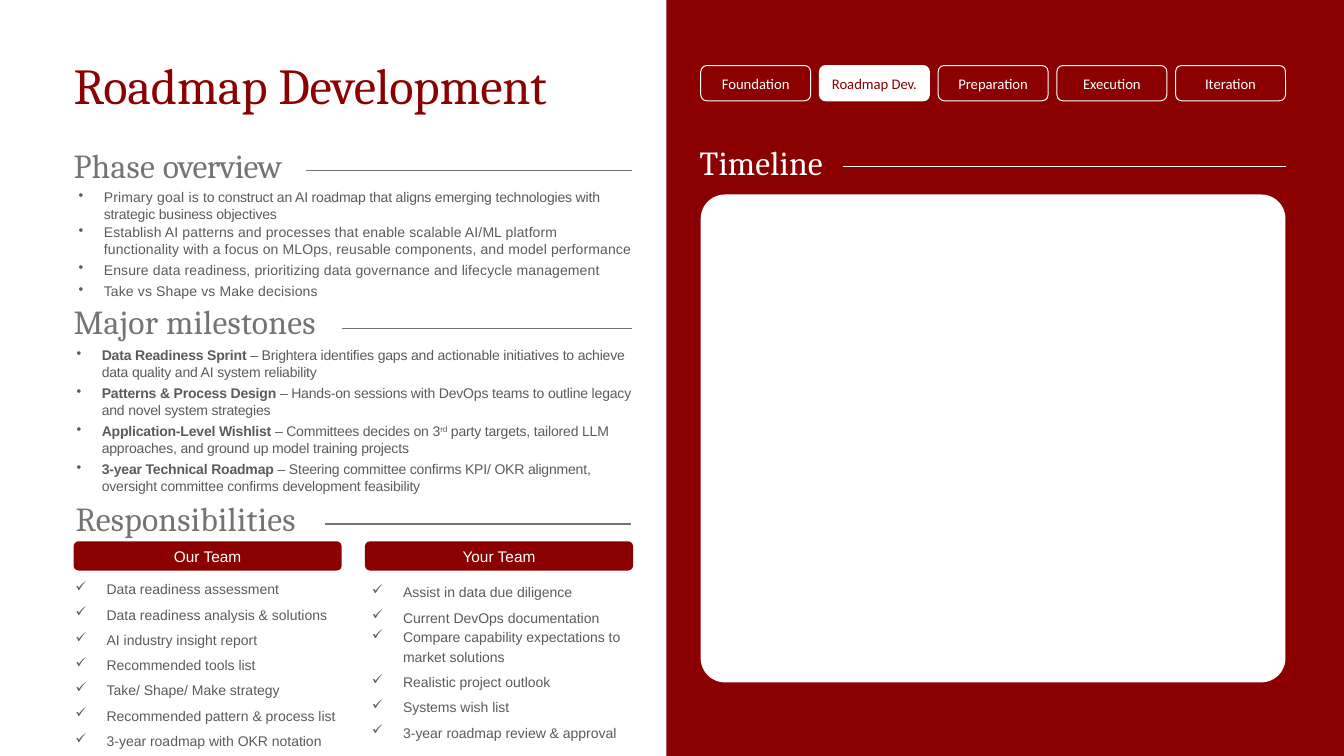
"""Build the Roadmap Development slide: phase summary on the left, timeline panel on the right."""
from dataclasses import dataclass

from lxml.etree import SubElement
from pptx import Presentation
from pptx.dml.color import RGBColor
from pptx.enum.shapes import MSO_CONNECTOR as Connector, MSO_SHAPE as Shape
from pptx.enum.text import MSO_ANCHOR as Anchor, PP_ALIGN as Align
from pptx.oxml.ns import qn
from pptx.util import Inches, Pt


@dataclass(frozen=True)
class Theme:
    red: str = "8B0000"
    white: str = "FFFFFF"
    gray: str = "747474"
    ink: str = "5A5B5E"
    serif: str = "Cambria"
    sans: str = "Arial"
    label: str = "Calibri"
    title_size: float = 36
    heading_size: float = 24
    button_size: float = 11
    tab_size: float = 10.5
    body_size: float = 10
    rule_width: float = 0.96
    tab_line: float = 0.72


THEME = Theme()

TITLE = "Roadmap Development"
PHASES = ["Foundation", "Roadmap Dev.", "Preparation", "Execution", "Iteration"]
CURRENT_PHASE = "Roadmap Dev."
TABS_LEFT, TABS_RIGHT, TABS_TOP = 6.95, 12.75, 0.65
TAB_WIDTH, TAB_HEIGHT = 1.09, 0.35

# Each heading: runs of (text, tracking), box, rule start, rule end, rule height, colour
HEADINGS = [
    ([("Phase ", 0.2), ("overview", -0.4)], (0.73, 1.43, 2.37, 0.42), 3.04, 6.27, 1.69, THEME.gray),
    ([("Major milestones", 0.2)], (0.73, 2.98, 2.66, 0.42), 3.39, 6.27, 3.26, THEME.gray),
    ([("Responsibilities", 0.2)], (0.75, 4.93, 2.5, 0.42), 3.22, 6.26, 5.2, THEME.gray),
    ([("Timeline", 0.1)], (6.94, 1.4, 2.84, 0.43), 8.36, 12.75, 1.65, THEME.white),
]

OVERVIEW = [
    (0.9, [("Primary ", 0.1), ("goal ", 0.2), ("is ", 0.1),
           ("to construct an AI roadmap that aligns emerging technologies with "
            "strategic business objectives", -0.1)]),
    (0.9, [("Establish AI patterns and processes that enable scalable AI/ML platform functionality "
            "with a focus on MLOps, reusable components, and model performance", 0.1)]),
    (3, [("Ensure data readiness, prioritizing data governance and lifecycle management", 0.1)]),
    (3, [("Take vs Shape vs Make decisions", 0.1)]),
]

MILESTONES = [
    ("Data Readiness Sprint ",
     ["– Brightera identifies gaps and actionable initiatives to "
      "achieve data quality and AI system reliability"]),
    ("Patterns & Process Design ",
     ["– Hands-on sessions with DevOps teams to outline legacy and novel system strategies"]),
    ("Application-Level Wishlist ",
     ["– Committees decides on 3", "rd",
      " party targets, tailored LLM approaches, and ground up model training projects"]),
    ("3-year Technical Roadmap ",
     ["– Steering committee confirms KPI/ OKR alignment, "
      "oversight committee confirms development feasibility"]),
]

TEAMS = [
    ("Our Team", 0.73, (0.65, 5.63, 2.86, 1.84), [
        "Data readiness assessment", "Data readiness analysis & solutions",
        "AI industry insight report", "Recommended tools list", "Take/ Shape/ Make strategy",
        "Recommended pattern & process list", "3-year roadmap with OKR notation"]),
    ("Your Team", 3.62, (3.59, 5.66, 2.86, 1.72), [
        "Assist in data due diligence", "Current DevOps documentation",
        "Compare capability expectations to market solutions", "Realistic project outlook",
        "Systems wish list", "3-year roadmap review & approval"]),
]
TWO_LINE_DUTY = "Compare capability expectations to market solutions"


def color(value):
    return RGBColor.from_string(value)


def add_span(para, text, font, size, tint, tracking=0, bold=False, raised=False):
    span = para.add_run()
    span.text = text
    span.font.name, span.font.size, span.font.bold = font, Pt(size), bold
    span.font.color.rgb = color(tint)
    properties = span.font._element
    if tracking:
        properties.set("spc", str(round(tracking * 100)))
    if raised:
        properties.set("baseline", "30000")


def add_block(page, kind, place, fill, line=None, corner=None):
    block = page.shapes.add_shape(kind, *map(Inches, place))
    block.shadow.inherit = False
    block.fill.solid()
    block.fill.fore_color.rgb = color(fill)
    if line:
        block.line.color.rgb = color(line)
        block.line.width = Pt(THEME.tab_line)
    else:
        block.line.fill.background()
    if corner:
        block.adjustments[0] = corner / min(place[2:])
    return block


def add_label(block, text, font, size, tint):
    frame = block.text_frame
    frame.margin_left = frame.margin_right = frame.margin_top = frame.margin_bottom = 0
    frame.vertical_anchor = Anchor.MIDDLE
    para = frame.paragraphs[0]
    para.alignment = Align.CENTER
    add_span(para, text, font, size, tint)


def add_box(page, place, inset=True):
    frame = page.shapes.add_textbox(*map(Inches, place)).text_frame
    frame.word_wrap = True
    if not inset:
        frame.margin_left = frame.margin_right = frame.margin_bottom = 0
        frame.margin_top = Inches(0.01)
    return frame


def add_rule(page, start, end, height, tint):
    rule = page.shapes.add_connector(
        Connector.STRAIGHT, Inches(start), Inches(height), Inches(end), Inches(height))
    rule.line.color.rgb = color(tint)
    rule.line.width = Pt(THEME.rule_width)
    SubElement(rule._element.spPr, qn("a:effectLst"))


def add_item(frame, index, mark, hang, indent):
    para = frame.add_paragraph() if index else frame.paragraphs[0]
    properties = para._p.get_or_add_pPr()
    properties.set("marL", str(Inches(indent)))
    properties.set("indent", str(-Inches(hang)))
    SubElement(properties, qn("a:buChar")).set("char", mark)
    return para


def main():
    deck = Presentation()
    deck.slide_width, deck.slide_height = Inches(13.33), Inches(7.5)
    page = deck.slides.add_slide(deck.slide_layouts[6])
    body = (THEME.sans, THEME.body_size, THEME.ink)

    add_block(page, Shape.RECTANGLE, (6.61, 0, 6.72, 7.5), THEME.red)
    add_block(page, Shape.ROUNDED_RECTANGLE, (6.95, 1.93, 5.8, 4.84), THEME.white, corner=0.24)

    title = add_box(page, (0.73, 0.52, 5.2, 0.62), inset=False)
    title.vertical_anchor = Anchor.MIDDLE
    title.paragraphs[0].space_before = Pt(1)
    add_span(title.paragraphs[0], TITLE, THEME.serif, THEME.title_size, THEME.red, -0.1)

    pitch = (TABS_RIGHT - TABS_LEFT - TAB_WIDTH) / (len(PHASES) - 1)
    for index, phase in enumerate(PHASES):
        fill, ink = THEME.red, THEME.white
        if phase == CURRENT_PHASE:
            fill, ink = ink, fill
        place = (TABS_LEFT + index * pitch, TABS_TOP, TAB_WIDTH, TAB_HEIGHT)
        tab = add_block(page, Shape.ROUNDED_RECTANGLE, place, fill, THEME.white, 0.06)
        add_label(tab, phase, THEME.label, THEME.tab_size, ink)

    for runs, place, start, end, height, tint in HEADINGS:
        para = add_box(page, place, inset=False).paragraphs[0]
        para.space_before = Pt(1)
        for text, tracking in runs:
            add_span(para, text, THEME.serif, THEME.heading_size, tint, tracking)
        add_rule(page, start, end, height, tint)

    overview = add_box(page, (0.77, 1.86, 5.51, 1.12), inset=False)
    for index, (gap, runs) in enumerate(OVERVIEW):
        para = add_item(overview, index, "•", 0.25, 0.26)
        para.space_before = Pt(gap)
        for text, tracking in runs:
            add_span(para, text, *body, tracking)

    milestones = add_box(page, (0.75, 3.43, 5.52, 1.91), inset=False)
    for index, (name, details) in enumerate(MILESTONES):
        para = add_item(milestones, index, "•", 0.25, 0.26)
        para.space_before = Pt(3)
        add_span(para, name, *body, -0.1, bold=True)
        for text in details:
            add_span(para, text, *body, -0.1, raised=text == "rd")

    for team, left, place, duties in TEAMS:
        button = add_block(page, Shape.ROUNDED_RECTANGLE, (left, 5.37, 2.66, 0.29), THEME.red, corner=0.05)
        add_label(button, team, THEME.sans, THEME.button_size, THEME.white)
        checklist = add_box(page, place)
        for index, duty in enumerate(duties):
            para = add_item(checklist, index, "✓", 0.31, 0.31)
            para.line_spacing = Pt(14) if duty == TWO_LINE_DUTY else 1.5
            add_span(para, duty, *body)

    deck.save("out.pptx")


if __name__ == "__main__":
    main()
